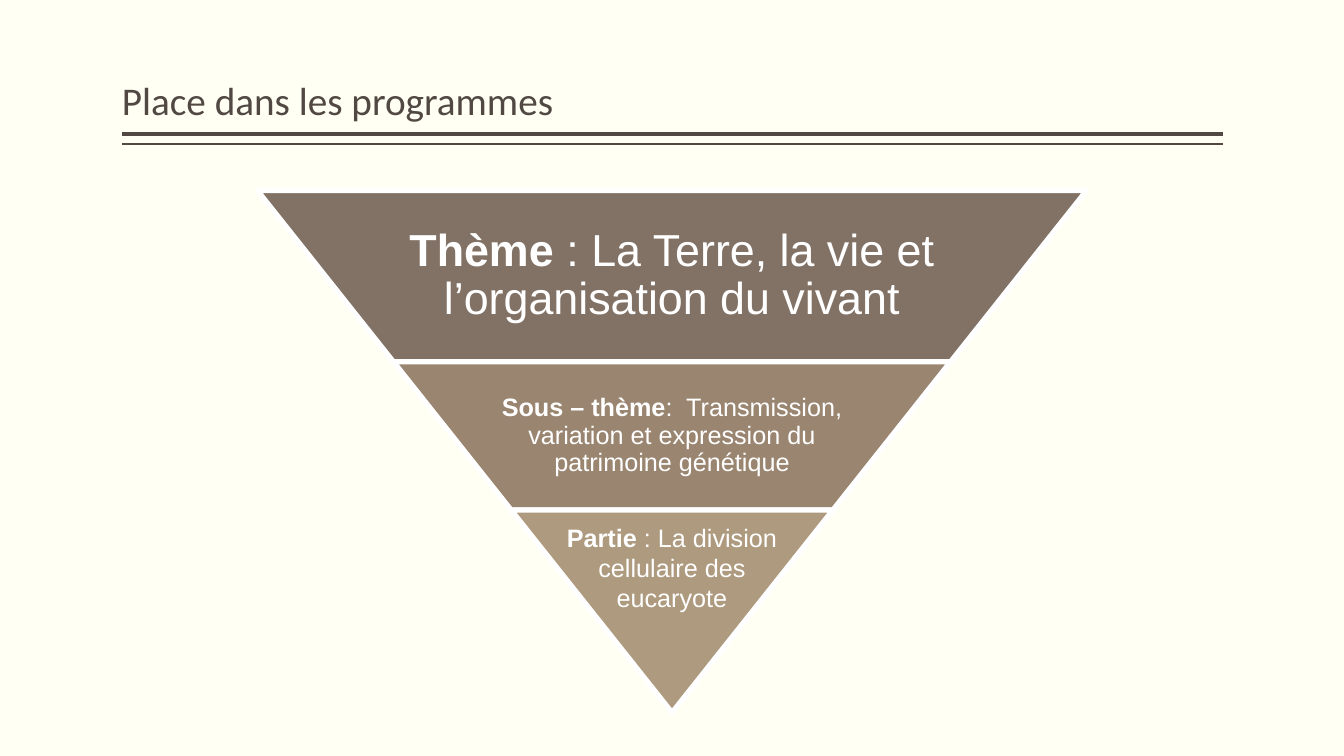
import pptx
import pptx.util
import pptx.dml.color
import pptx.enum.shapes
import pptx.enum.text
import lxml.etree

RGB = pptx.dml.color.RGBColor
Pt = pptx.util.Pt
SHAPE = pptx.enum.shapes.MSO_SHAPE
ANCHOR = pptx.enum.text.MSO_ANCHOR
ALIGN = pptx.enum.text.PP_ALIGN

IVORY = RGB(0xFF, 0xFF, 0xF3)
BROWN = RGB(0x51, 0x48, 0x43)
WHITE = RGB(0xFF, 0xFF, 0xFF)
UMBER = RGB(0x82, 0x72, 0x66)
TAN = RGB(0x9A, 0x85, 0x70)
SAND = RGB(0xAE, 0x9A, 0x7E)

COLS, ROWS = 40, 22.5
CELL = pptx.util.Inches(1 / 3)
LEFT, RIGHT = 3.63, 36.39
MID = COLS / 2
TOP, TIP = 5.67, 21.21
SLOPE = 0.794


def cells(*counts):
    return [round(n * CELL) for n in counts]


class Deck:
    def __init__(self):
        self.prs = pptx.Presentation()
        self.prs.slide_width, self.prs.slide_height = cells(COLS, ROWS)
        self.slide = self.prs.slides.add_slide(self.prs.slide_layouts[6])
        fill = self.slide.background.fill
        fill.solid()
        fill.fore_color.rgb = IVORY

    def rule(self, row, width):
        line = self.slide.shapes.add_connector(
            pptx.enum.shapes.MSO_CONNECTOR.STRAIGHT, *cells(RIGHT, row, LEFT, row))
        line.line.color.rgb = BROWN
        line.line.width = Pt(width)
        tag = pptx.oxml.ns.qn("a:effectLst")
        lxml.etree.SubElement(line._element.spPr, tag)

    def text(self, box, parts, size, font, color, anchor, align, pads, space=None):
        """Add one paragraph; parts are (words, bold) pairs, pads are in points."""
        frame = self.slide.shapes.add_textbox(*cells(*box)).text_frame
        frame.word_wrap = True
        frame.vertical_anchor = anchor
        frame.margin_left = frame.margin_right = Pt(pads[0])
        frame.margin_top = frame.margin_bottom = Pt(pads[1])
        para = frame.paragraphs[0]
        para.alignment = align
        if space:
            para.line_spacing = space
        for words, bold in parts:
            run = para.add_run()
            run.text = words
            run.font.name = font
            run.font.size = Pt(size)
            run.font.bold = bold
            run.font.color.rgb = color

    def band(self, top, high, color):
        """Add a slice of the funnel and return its width at the top."""
        wide = 2 * SLOPE * (TIP - top)
        shape = self.slide.shapes.add_shape(
            SHAPE.TRAPEZOID, *cells(MID - wide / 2, top, wide, high))
        shape.adjustments[0] = SLOPE
        shape.rotation = 180
        shape.shadow.inherit = False
        shape.fill.solid()
        shape.fill.fore_color.rgb = color
        shape.line.color.rgb = WHITE
        shape.line.width = Pt(3.78)
        return wide


def main():
    deck = Deck()
    deck.rule(3.99, 3)
    deck.rule(4.29, 1)
    deck.text((LEFT, 0.24, RIGHT - LEFT, 3.6), [("Place dans les programmes", False)],
              28, "Calibri", BROWN, ANCHOR.BOTTOM, ALIGN.LEFT, (0, 3.6), 0.9)

    # height, colour, label, rest, size, text share, text drop, anchor, pads, spacing
    bands = [
        (5.1, UMBER, "Thème ", ": La Terre, la vie et l’organisation du vivant",
         32, 0.65, 0, ANCHOR.MIDDLE, (3, 3), 0.9),
        (4.41, TAN, "Sous – thème",
         ":  Transmission, variation et expression du patrimoine génétique",
         18, 0.65, 0, ANCHOR.MIDDLE, (2, 2), 0.9),
        (6.03, SAND, "Partie", " : La division cellulaire des eucaryote",
         18, 0.8, 0.21, ANCHOR.TOP, (7.2, 3.6), None),
    ]
    top = TOP
    for high, color, label, rest, size, share, drop, anchor, pads, space in bands:
        wide = share * deck.band(top, high, color)
        deck.text((MID - wide / 2, top + drop, wide, high - 10 * drop),
                  [(label, True), (rest, False)],
                  size, "Arial", WHITE, anchor, ALIGN.CENTER, pads, space)
        top += high
    deck.prs.save("out.pptx")


if __name__ == "__main__":
    main()
